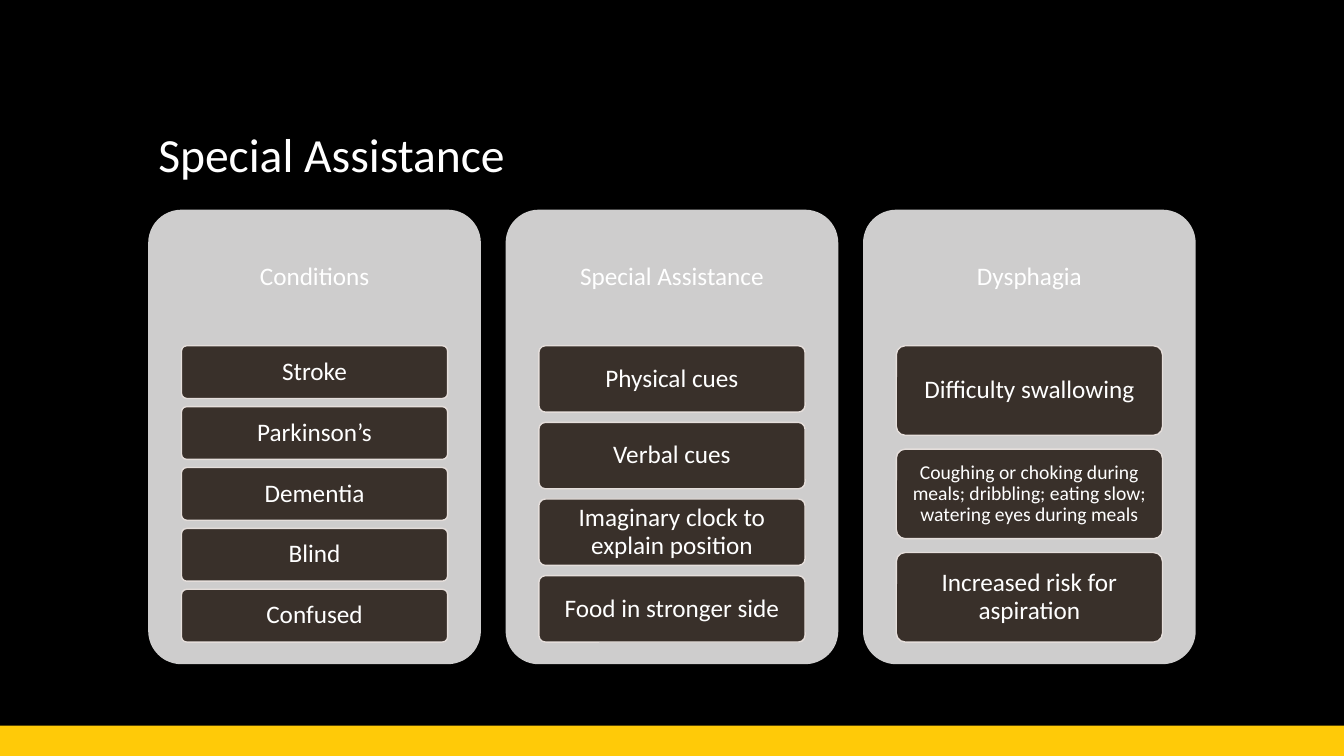
import pptx
import pptx.util
import pptx.dml.color
import pptx.enum.shapes
import pptx.enum.text

Inches = pptx.util.Inches
Shape = pptx.enum.shapes.MSO_SHAPE
Align = pptx.enum.text.PP_ALIGN
Anchor = pptx.enum.text.MSO_ANCHOR

WHITE, GOLD, GREY, BROWN, EDGE = "FFFFFF", "FFCA08", "CECDCD", "39302A", "E5DEDB"

LEFT, TOP = 1.47, 2.08
WIDTH, HEIGHT = 3.3, 4.51
STEP = 3.545  # from one column to the next
HEAD = 1.35
INDENT = 0.33
STACK = 2.94  # height shared by the boxes of a column
GAP = 0.154  # gap between boxes, as a share of box height

COLUMNS = [
    ("Conditions", ["Stroke", "Parkinson’s", "Dementia", "Blind", "Confused"]),
    ("Special Assistance", ["Physical cues", "Verbal cues",
                            "Imaginary clock to explain position",
                            "Food in stronger side"]),
    ("Dysphagia", ["Difficulty swallowing",
                   "Coughing or choking during meals; dribbling; "
                   "eating slow; watering eyes during meals",
                   "Increased risk for aspiration"]),
]


def color(code):
    return pptx.dml.color.RGBColor.from_string(code)


def write(shape, text, size=18, align=Align.CENTER, anchor=Anchor.MIDDLE,
          inset=(0.05, 0.04)):
    """Fill a shape with one paragraph; inset is (sides, top and bottom)."""
    frame = shape.text_frame
    frame.word_wrap = True
    frame.auto_size = pptx.enum.text.MSO_AUTO_SIZE.NONE
    frame.vertical_anchor = anchor
    frame.margin_left = frame.margin_right = Inches(inset[0])
    frame.margin_top = frame.margin_bottom = Inches(inset[1])
    par = frame.paragraphs[0]
    par.alignment = align
    par.line_spacing = 0.9
    run = par.add_run()
    run.text = text
    run.font.name = "Calibri"
    run.font.size = pptx.util.Pt(size)
    run.font.color.rgb = color(WHITE)


def block(slide, kind, x, y, w, h, fill, line=None):
    shape = slide.shapes.add_shape(kind, Inches(x), Inches(y), Inches(w), Inches(h))
    shape.shadow.inherit = False
    shape.fill.solid()
    shape.fill.fore_color.rgb = color(fill)
    if line:
        shape.line.color.rgb = color(line)
        shape.line.width = pptx.util.Pt(1)
    else:
        shape.line.fill.background()
    if kind == Shape.ROUNDED_RECTANGLE:
        shape.adjustments[0] = 0.1
    return shape


def column(slide, x, head, items):
    block(slide, Shape.ROUNDED_RECTANGLE, x, TOP, WIDTH, HEIGHT, GREY)
    label = slide.shapes.add_textbox(Inches(x), Inches(TOP), Inches(WIDTH), Inches(HEAD))
    write(label, head, inset=(0.07, 0.07))
    count = len(items)
    high = STACK / (count + (count - 1) * GAP)
    for i, item in enumerate(items):
        y = TOP + HEAD + i * high * (1 + GAP)
        box = block(slide, Shape.ROUNDED_RECTANGLE, x + INDENT, y,
                    WIDTH - 2 * INDENT, high, BROWN, EDGE)
        if len(item) > 50:
            write(box, item, size=14, inset=(0.04, 0.03))
        else:
            write(box, item)


def main():
    deck = pptx.Presentation()
    deck.slide_width, deck.slide_height = Inches(13.33), Inches(7.5)
    slide = deck.slides.add_slide(deck.slide_layouts[5])
    slide.background.fill.solid()
    slide.background.fill.fore_color.rgb = color("000000")
    block(slide, Shape.RECTANGLE, 0, 7.2, 13.33, 0.3, GOLD)

    title = slide.shapes.title
    title.left, title.top = Inches(LEFT), Inches(0.51)
    title.width, title.height = Inches(10.4), Inches(1.35)
    write(title, "Special Assistance", size=34, align=Align.LEFT,
          anchor=Anchor.BOTTOM, inset=(0.1, 0.05))

    for i, (head, items) in enumerate(COLUMNS):
        column(slide, LEFT + i * STEP, head, items)
    deck.save("out.pptx")


if __name__ == "__main__":
    main()
